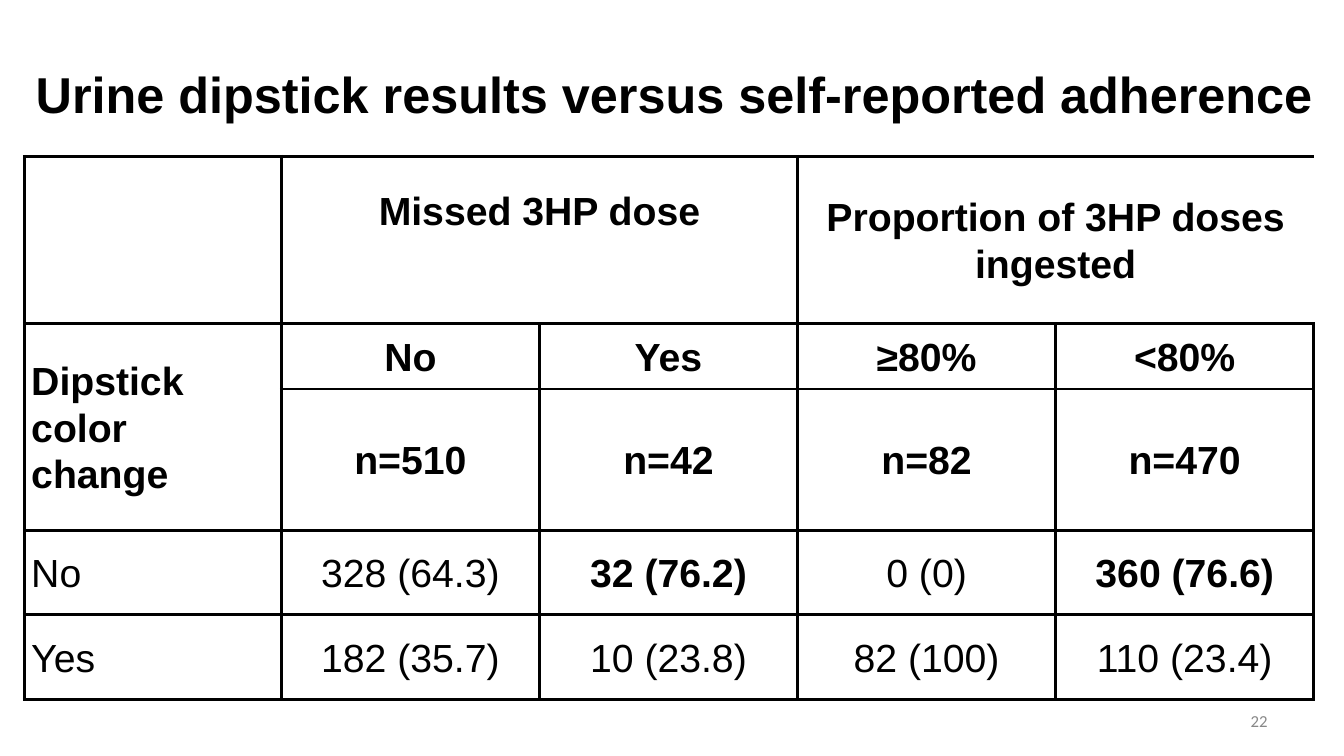
from dataclasses import dataclass

from lxml.etree import SubElement
from pptx import Presentation
from pptx.dml.color import RGBColor
from pptx.enum.text import MSO_ANCHOR, MSO_AUTO_SIZE, PP_ALIGN
from pptx.oxml.ns import qn
from pptx.table import Table, _Cell
from pptx.text.text import _Paragraph
from pptx.util import Inches, Pt

COLORS = {"ink": "000000", "paper": "FFFFFF", "number": "888888"}
SLIDE_WIDTH, SLIDE_HEIGHT = 13.33, 7.5
TABLE_LEFT, TABLE_TOP = 0.24, 1.55
COLUMN_WIDTHS = [2.55] + [2.56] * 4
ROW_HEIGHTS = [1.66, 0.65, 1.4, 0.84, 0.84]
BORDER_WIDTH = 2.25


@dataclass(frozen=True)
class Entry:
    text: str = ""
    bold: bool = False
    columns: int = 1
    rows: int = 1
    edges: str = "LRTB"
    bottom_margin: float = 0


def head(text: str) -> Entry:
    return Entry(text, bold=True)


ROWS = [
    [Entry(),
     Entry("Missed 3HP dose", True, columns=2, edges="LTB", bottom_margin=0.59),
     Entry(edges="TB"),
     Entry("Proportion of 3HP doses ingested", True, columns=2, edges="LTB"),
     Entry(edges="TB")],
    [Entry("Dipstick color change", True, rows=2, edges="LRT"),
     head("No"), head("Yes"), head("≥80%"), head("<80%")],
    [Entry(edges="LRB"),
     head("n=510"), head("n=42"), head("n=82"), head("n=470")],
    [Entry("No"), Entry("328 (64.3)"), head("32 (76.2)"), Entry("0 (0)"), head("360 (76.6)")],
    [Entry("Yes"), Entry("182 (35.7)"), Entry("10 (23.8)"), Entry("82 (100)"),
     Entry("110 (23.4)")],
]


def add_span(para: _Paragraph, text: str, size: float, font: str, color: str,
             bold: bool = False) -> None:
    span = para.add_run()
    span.text = text
    span.font.size = Pt(size)
    span.font.name = font
    span.font.bold = bold
    span.font.color.rgb = RGBColor.from_string(COLORS[color])


def draw_borders(cell: _Cell, edges: str) -> None:
    """Line the named edges and leave the others open."""
    properties = cell._tc.get_or_add_tcPr()
    for edge in "LRTB":
        line = SubElement(properties, qn(f"a:ln{edge}"), w=str(Pt(BORDER_WIDTH)))
        if edge in edges:
            fill = SubElement(line, qn("a:solidFill"))
            SubElement(fill, qn("a:srgbClr"), val=COLORS["ink"])
        else:
            SubElement(line, qn("a:noFill"))


def fill_cell(table: Table, row: int, column: int, entry: Entry) -> None:
    cell = table.cell(row, column)
    draw_borders(cell, entry.edges)
    cell.fill.solid()
    cell.fill.fore_color.rgb = RGBColor.from_string(COLORS["paper"])
    cell.vertical_anchor = MSO_ANCHOR.MIDDLE
    cell.margin_left = cell.margin_right = Inches(0.07)
    cell.margin_top = 0
    cell.margin_bottom = Inches(entry.bottom_margin)
    if entry.columns > 1 or entry.rows > 1:
        cell.merge(table.cell(row + entry.rows - 1, column + entry.columns - 1))
    if entry.text:
        para = cell.text_frame.paragraphs[0]
        para.alignment = PP_ALIGN.CENTER if column else PP_ALIGN.LEFT
        para.line_spacing = 1.07
        add_span(para, entry.text, 28, "Arial", "ink", entry.bold)


def main() -> None:
    deck = Presentation()
    deck.slide_width, deck.slide_height = Inches(SLIDE_WIDTH), Inches(SLIDE_HEIGHT)
    page = deck.slides.add_slide(deck.slide_layouts[5])

    title = page.shapes.title
    title.left, title.top = Inches(-0.28), Inches(0.3)
    title.width, title.height = Inches(13.94), Inches(1.25)
    title.text_frame.auto_size = MSO_AUTO_SIZE.NONE
    title.text_frame.vertical_anchor = MSO_ANCHOR.MIDDLE
    para = title.text_frame.paragraphs[0]
    para.alignment = PP_ALIGN.CENTER
    add_span(para, "Urine dipstick results versus self-reported adherence",
             36, "Arial", "ink", bold=True)

    number_box = page.shapes.add_textbox(Inches(9.56), Inches(6.95), Inches(3.11), Inches(0.4))
    number_box.text_frame.word_wrap = True
    number_box.text_frame.vertical_anchor = MSO_ANCHOR.MIDDLE
    para = number_box.text_frame.paragraphs[0]
    para.alignment = PP_ALIGN.RIGHT
    add_span(para, "22", 12, "Calibri", "number")

    table = page.shapes.add_table(
        len(ROW_HEIGHTS), len(COLUMN_WIDTHS), Inches(TABLE_LEFT), Inches(TABLE_TOP),
        Inches(sum(COLUMN_WIDTHS)), Inches(sum(ROW_HEIGHTS))).table
    table.first_row = table.horz_banding = False
    for column, width in zip(table.columns, COLUMN_WIDTHS):
        column.width = Inches(width)
    for row, height in zip(table.rows, ROW_HEIGHTS):
        row.height = Inches(height)
    for row_index, entries in enumerate(ROWS):
        for column_index, entry in enumerate(entries):
            fill_cell(table, row_index, column_index, entry)

    deck.save("out.pptx")


if __name__ == "__main__":
    main()
